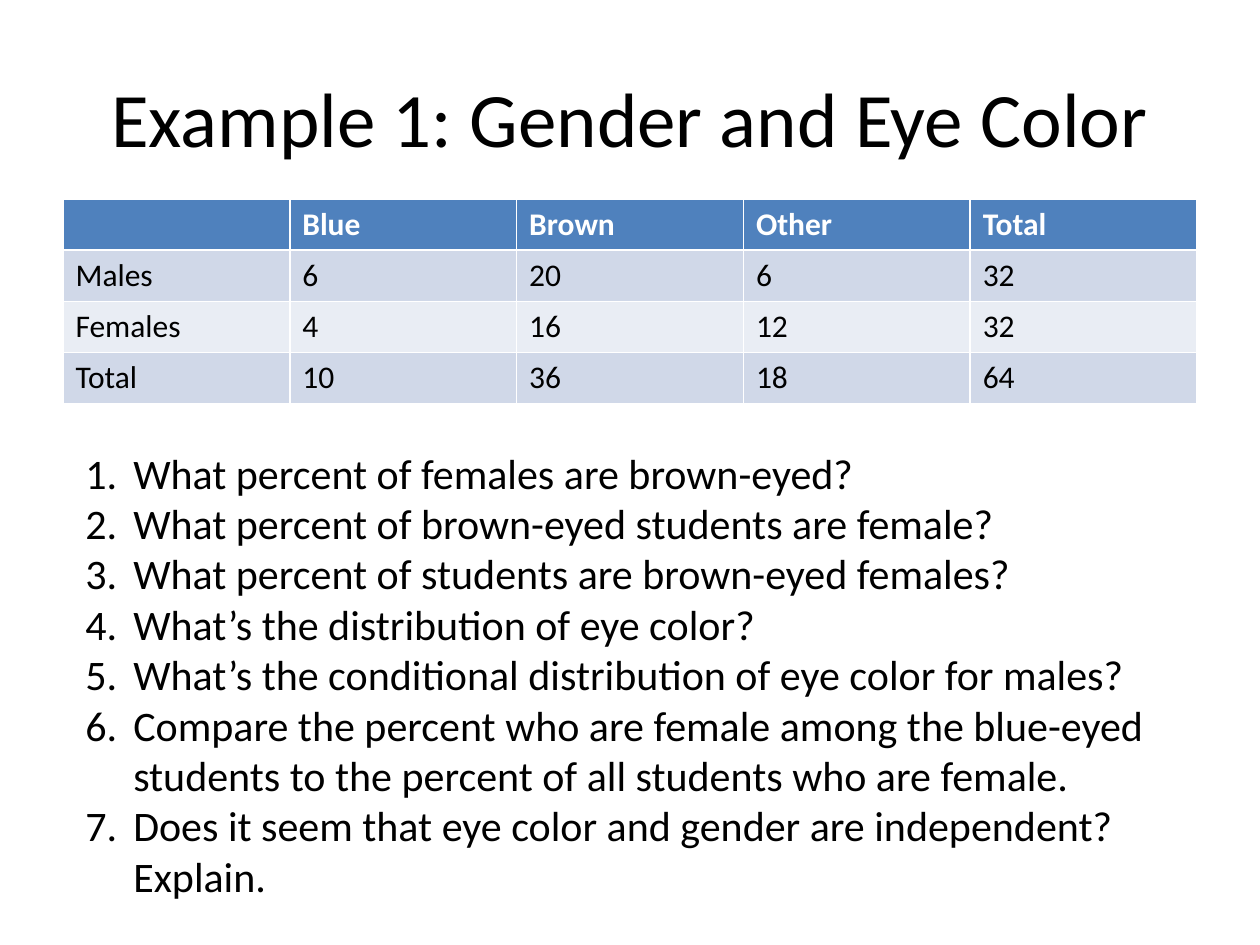
from dataclasses import dataclass

from lxml.etree import SubElement
from pptx import Presentation
from pptx.dml.color import RGBColor
from pptx.enum.text import MSO_ANCHOR, PP_ALIGN
from pptx.oxml.ns import qn
from pptx.util import Inches, Pt

TITLE = "Example 1: Gender and Eye Color"
ROWS = [
    ["", "Blue", "Brown", "Other", "Total"],
    ["Males", "6", "20", "6", "32"],
    ["Females", "4", "16", "12", "32"],
    ["Total", "10", "36", "18", "64"],
]
QUESTIONS = [
    "What percent of females are brown-eyed?",
    "What percent of brown-eyed students are female?",
    "What percent of students are brown-eyed females?",
    "What’s the distribution of eye color?",
    "What’s the conditional distribution of eye color for males?",
    "Compare the percent who are female among the blue-eyed students "
    "to the percent of all students who are female.",
    "Does it seem that eye color and gender are independent? Explain.",
]


@dataclass(frozen=True)
class Theme:
    font: str = "Calibri"
    text: str = "000000"
    header_text: str = "FFFFFF"
    header_fill: str = "4F81BD"
    bands: tuple = ("D0D8E8", "E9EDF4")
    title_size: int = 44
    table_size: int = 18
    list_size: int = 24


THEME = Theme()


def add_run(p, text, size, color=THEME.text, bold=False):
    r = p.add_run()
    r.text = text
    r.font.name = THEME.font
    r.font.size = Pt(size)
    r.font.bold = bold
    r.font.color.rgb = RGBColor.from_string(color)


def add_title(s):
    sp = s.shapes.title
    sp.left, sp.top = Inches(0.5), Inches(0.3)
    sp.width, sp.height = Inches(9), Inches(1.25)
    tf = sp.text_frame
    tf.vertical_anchor = MSO_ANCHOR.MIDDLE
    p = tf.paragraphs[0]
    p.alignment = PP_ALIGN.CENTER
    add_run(p, TITLE, THEME.title_size)


def add_eye_color_table(s):
    table = s.shapes.add_table(len(ROWS), len(ROWS[0]), Inches(0.5), Inches(1.58),
                               Inches(9), Inches(1.62)).table
    for i, row in enumerate(ROWS):
        header = i == 0
        fill = THEME.header_fill if header else THEME.bands[(i - 1) % 2]
        color = THEME.header_text if header else THEME.text
        for j, text in enumerate(row):
            cell = table.cell(i, j)
            cell.fill.solid()
            cell.fill.fore_color.rgb = RGBColor.from_string(fill)
            if text:
                add_run(cell.text_frame.paragraphs[0], text, THEME.table_size, color, header)


def number_paragraph(p, indent):
    pPr = p._p.get_or_add_pPr()
    pPr.set("marL", str(indent))
    pPr.set("indent", str(-indent))
    SubElement(pPr, qn("a:buFont"), typeface="+mj-lt")
    SubElement(pPr, qn("a:buAutoNum"), type="arabicPeriod")


def add_questions(s):
    sp = s.shapes.add_textbox(Inches(0.58), Inches(3.5), Inches(8.83), Inches(4.04))
    tf = sp.text_frame
    tf.word_wrap = True
    for i, question in enumerate(QUESTIONS):
        p = tf.add_paragraph() if i else tf.paragraphs[0]
        number_paragraph(p, Inches(0.38))
        add_run(p, question, THEME.list_size)


def main():
    prs = Presentation()
    prs.slide_width, prs.slide_height = Inches(10), Inches(7.5)
    s = prs.slides.add_slide(prs.slide_layouts[5])
    add_title(s)
    add_eye_color_table(s)
    add_questions(s)
    prs.save("out.pptx")


if __name__ == "__main__":
    main()
